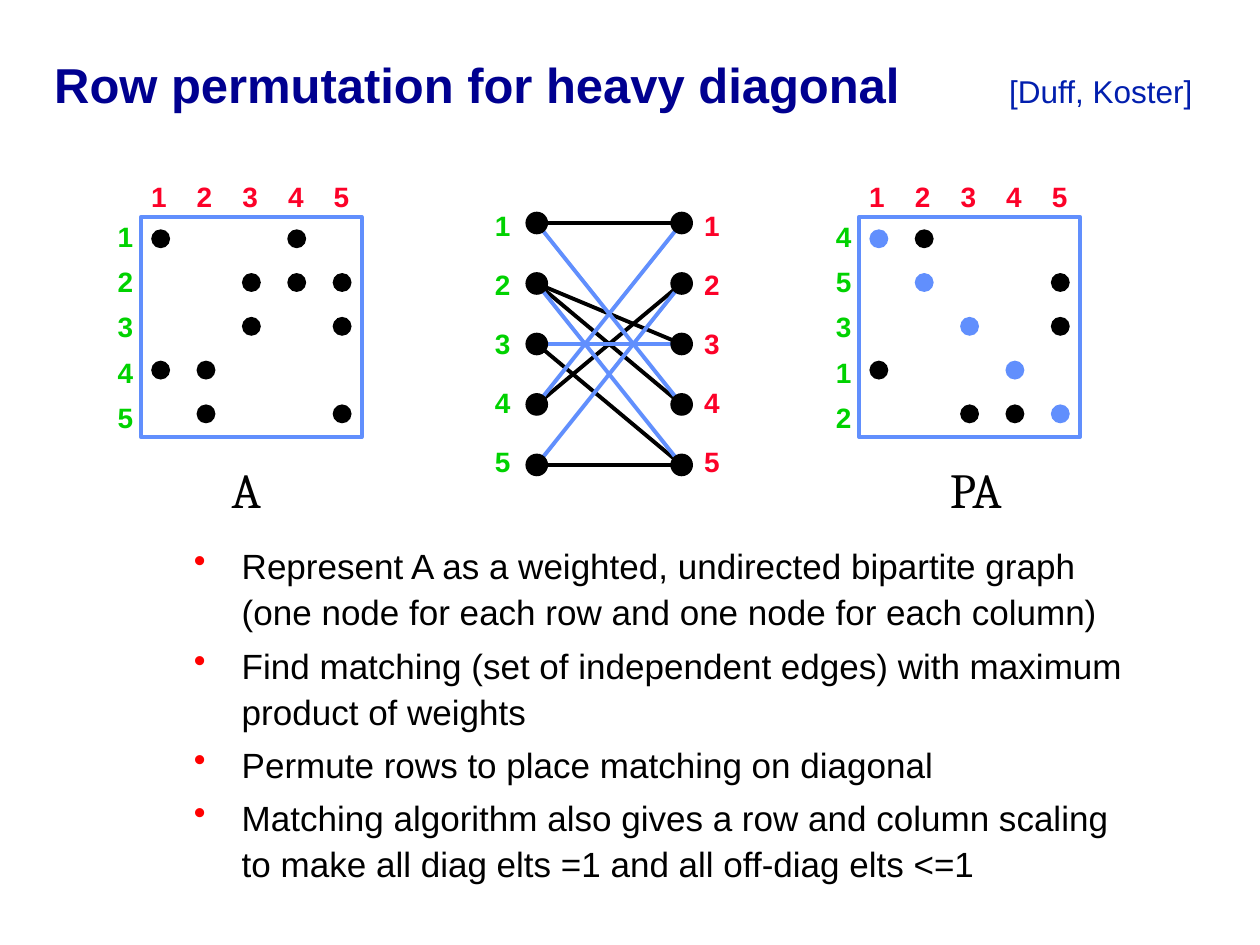
from lxml import etree
from pptx import Presentation
from pptx.dml.color import RGBColor
from pptx.enum.shapes import MSO_CONNECTOR, MSO_SHAPE
from pptx.enum.text import MSO_ANCHOR, MSO_AUTO_SIZE, PP_ALIGN
from pptx.oxml.ns import qn
from pptx.util import Inches, Pt

OVAL, RECTANGLE = MSO_SHAPE.OVAL, MSO_SHAPE.RECTANGLE
STRAIGHT = MSO_CONNECTOR.STRAIGHT
LEFT, MIDDLE = PP_ALIGN.LEFT, MSO_ANCHOR.MIDDLE
FIT_SHAPE, NO_FIT = MSO_AUTO_SIZE.SHAPE_TO_FIT_TEXT, MSO_AUTO_SIZE.NONE

COLORS = {
    "title": "000090", "author": "021FAE", "text": "000000", "bullet": "FF0000",
    "row": "00D200", "column": "FC0128", "entry": "000000", "match": "618FFD",
}

# Nonzero columns of each row of A, and the column matched to each row
ENTRIES = {1: [1, 4], 2: [3, 4, 5], 3: [3, 5], 4: [1, 2], 5: [2, 5]}
MATCHING = {4: 1, 5: 2, 3: 3, 1: 4, 2: 5}

BULLETS = [
    "Represent A as a weighted, undirected bipartite graph "
    "(one node for each row and one node for each column)",
    "Find matching (set of independent edges) with maximum product of weights",
    "Permute rows to place matching on diagonal",
    "Matching algorithm also gives a row and column scaling \n"
    "to make all diag elts =1 and all off-diag elts <=1",
]


def rgb(name):
    return RGBColor.from_string(COLORS[name])


def add_text(para, text, size=16, color="text", bold=False, font="Arial"):
    for number, line in enumerate(text.split("\n")):
        if number:
            para.add_line_break()
        span = para.add_run()
        span.text = line
        span.font.name, span.font.size, span.font.bold = font, Pt(size), bold
        span.font.color.rgb = rgb(color)


class SlideBuilder:
    line_width = Pt(2.25)

    def __init__(self, slide):
        self.slide = slide
        self.shapes = slide.shapes

    def start_group(self):
        self.shapes = self.slide.shapes.add_group_shape().shapes

    def title(self, text, author):
        box = self.slide.shapes.title
        box.left, box.top = Inches(0.33), Inches(0.33)
        box.width, box.height = Inches(9.42), Inches(0.67)
        frame = box.text_frame
        frame.vertical_anchor, frame.auto_size = MIDDLE, NO_FIT
        para = frame.paragraphs[0]
        para.alignment = LEFT
        tabs = etree.SubElement(para._p.get_or_add_pPr(), qn("a:tabLst"))
        etree.SubElement(tabs, qn("a:tab"), pos=str(Inches(7.58)), algn="l")
        add_text(para, text + "\t", size=28, color="title", bold=True)
        add_text(para, author, size=18, color="author")

    def bullets(self, items, left, top, width, height):
        box = self.shapes.add_textbox(Inches(left), Inches(top), Inches(width), Inches(height))
        frame = box.text_frame
        frame.word_wrap = True
        for number, item in enumerate(items):
            para = frame.add_paragraph() if number else frame.paragraphs[0]
            para.line_spacing, para.space_before = 1.1, Pt(4)
            props = para._p.get_or_add_pPr()
            props.set("marL", str(Inches(0.38)))
            props.set("indent", str(-Inches(0.38)))
            color = etree.SubElement(props, qn("a:buClr"))
            etree.SubElement(color, qn("a:srgbClr"), val=COLORS["bullet"])
            etree.SubElement(props, qn("a:buChar"), char="•")
            add_text(para, item, size=20)

    def label(self, text, left, top, width=0.32, height=0.37, **style):
        box = self.shapes.add_textbox(Inches(left), Inches(top), Inches(width), Inches(height))
        frame = box.text_frame
        frame.word_wrap, frame.auto_size = False, FIT_SHAPE
        add_text(frame.paragraphs[0], text, **style)

    def dot(self, left, top, size, color="entry"):
        dot = self.shapes.add_shape(OVAL, Inches(left), Inches(top), Inches(size), Inches(size))
        dot.shadow.inherit = False
        dot.fill.solid()
        dot.fill.fore_color.rgb = rgb(color)
        dot.line.fill.background()

    def frame(self, left, top, size):
        square = self.shapes.add_shape(
            RECTANGLE, Inches(left), Inches(top), Inches(size), Inches(size))
        square.shadow.inherit = False
        square.fill.background()
        square.line.color.rgb = rgb("match")
        square.line.width = self.line_width

    def edge(self, x1, y1, x2, y2, color):
        line = self.shapes.add_connector(STRAIGHT, Inches(x1), Inches(y1), Inches(x2), Inches(y2))
        line.line.color.rgb = rgb(color)
        line.line.width = self.line_width
        etree.SubElement(line._element.spPr, qn("a:effectLst"))

    def matrix(self, name, left, row_order, caption_width, mark_diagonal=False):
        self.start_group()
        top = 1.72
        for position, row in enumerate(row_order):
            for column in ENTRIES[row]:
                matched = mark_diagonal and column == MATCHING[row]
                self.dot(left + 0.08 + 0.36 * (column - 1), top + 0.1 + 0.3475 * position,
                         0.15, "match" if matched else "entry")
        self.frame(left, top, 1.75)
        for position, row in enumerate(row_order):
            offset = 0.36 * position
            self.label(str(position + 1), left - 0.02 + offset * 1.007, 1.38,
                       color="column", bold=True)
            self.label(str(row), left - 0.285, 1.69 + offset, color="row", bold=True)
        self.label(name, left + 0.62, 3.6, caption_width, 0.57, size=28, font="Cambria")

    def graph(self):
        self.start_group()
        row_x, column_x, top, step, node = 4.26, 5.41, 1.77, 0.48, 0.18
        edges = [(row, column) for row in ENTRIES for column in ENTRIES[row]]
        # Matched edges lie over the others
        for row, column in sorted(edges, key=lambda pair: MATCHING[pair[0]] == pair[1]):
            color = "match" if MATCHING[row] == column else "entry"
            self.edge(row_x, top + step * (row - 1), column_x, top + step * (column - 1), color)
        for index in range(5):
            for x, label_x, color in ((row_x, 3.83, "row"), (column_x, 5.49, "column")):
                self.dot(x - node / 2, top + step * index - node / 2, node)
                self.label(str(index + 1), label_x, 1.61 + 0.4675 * index,
                           color=color, bold=True)


def main():
    deck = Presentation()
    deck.slide_width, deck.slide_height = Inches(10), Inches(7.5)
    page = SlideBuilder(deck.slides.add_slide(deck.slide_layouts[5]))

    # Heading and explanation
    page.title("Row permutation for heavy diagonal", "[Duff, Koster]")
    page.bullets(BULLETS, 1.44, 4.24, 7.75, 2.92)

    # Matrix, its bipartite graph and the permuted matrix
    page.matrix("A", 1.12, list(ENTRIES), 0.48)
    page.graph()
    page.matrix("PA", 6.82, list(MATCHING), 0.67, mark_diagonal=True)

    deck.save("out.pptx")


if __name__ == "__main__":
    main()
